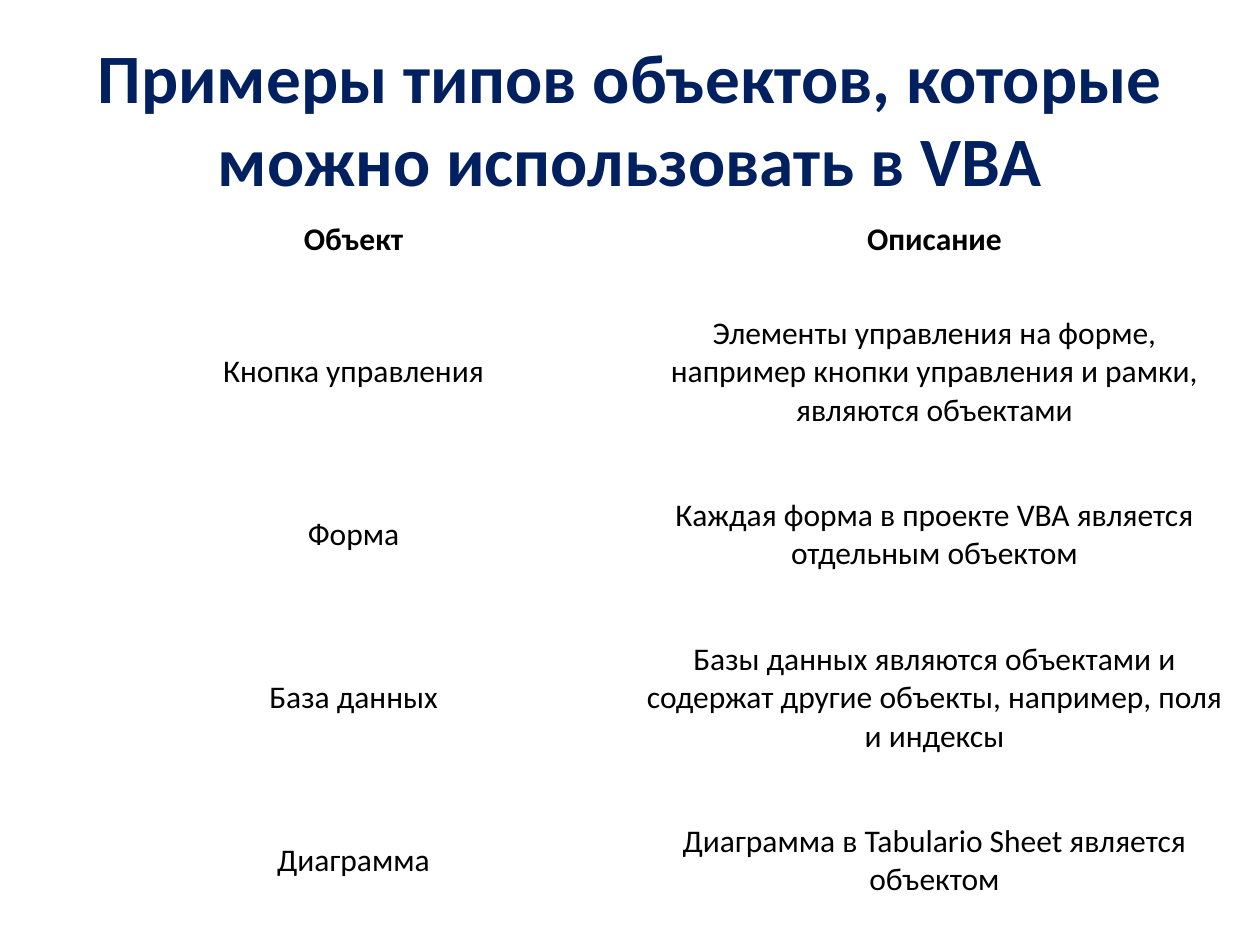
from dataclasses import dataclass

from pptx import Presentation
from pptx.dml.color import RGBColor
from pptx.enum.text import MSO_ANCHOR, PP_ALIGN
from pptx.util import Pt

EMU_PER_PX = 914400 / 126


@dataclass(frozen=True)
class Theme:
    font: str = "Calibri"
    background: str = "FFFFFF"
    title_color: str = "002060"
    text_color: str = "000000"
    title_size: float = 39.6
    table_size: float = 18


def px(length):
    return round(length * EMU_PER_PX)


def write_text(text_frame, text, *, font, size, color, bold=False):
    paragraph = text_frame.paragraphs[0]
    paragraph.alignment = PP_ALIGN.CENTER
    run = paragraph.add_run()
    run.text = text
    run.font.name = font
    run.font.size = Pt(size)
    run.font.bold = bold
    run.font.color.rgb = RGBColor.from_string(color)


class SlideBuilder:
    def __init__(self, slide, theme):
        self.slide = slide
        self.theme = theme
        fill = slide.background.fill
        fill.solid()
        fill.fore_color.rgb = RGBColor.from_string(theme.background)

    def title(self, text, left, top, width, height):
        box = self.slide.shapes.add_textbox(px(left), px(top), px(width), px(height))
        text_frame = box.text_frame
        text_frame.word_wrap = True
        text_frame.vertical_anchor = MSO_ANCHOR.MIDDLE
        write_text(text_frame, text, font=self.theme.font, size=self.theme.title_size,
                   color=self.theme.title_color, bold=True)

    def table(self, rows, left, top, column_widths, row_heights, margin):
        """Add a table whose first row is a bold header."""
        table = self.slide.shapes.add_table(
            len(rows), len(column_widths), px(left), px(top),
            px(sum(column_widths)), px(sum(row_heights))).table
        for column, width in zip(table.columns, column_widths):
            column.width = px(width)
        for row_index, (texts, height) in enumerate(zip(rows, row_heights)):
            table.rows[row_index].height = px(height)
            for column_index, text in enumerate(texts):
                self.cell(table.cell(row_index, column_index), text, margin,
                          bold=row_index == 0)

    def cell(self, cell, text, margin, bold):
        cell.fill.solid()
        cell.fill.fore_color.rgb = RGBColor.from_string(self.theme.background)
        cell.vertical_anchor = MSO_ANCHOR.MIDDLE
        cell.margin_left = cell.margin_right = px(margin)
        cell.margin_top = cell.margin_bottom = px(margin)
        write_text(cell.text_frame, text, font=self.theme.font,
                   size=self.theme.table_size, color=self.theme.text_color, bold=bold)


OBJECT_ROWS = [
    ("Объект", "Описание"),
    ("Кнопка управления",
     "Элементы управления на форме, например кнопки управления и рамки, "
     "являются объектами"),
    ("Форма", "Каждая форма в проекте VBA является отдельным объектом"),
    ("База данных",
     "Базы данных являются объектами и содержат другие объекты, "
     "например, поля и индексы"),
    ("Диаграмма", "Диаграмма в Tabulario Sheet является объектом"),
]


def main():
    presentation = Presentation()
    presentation.slide_width = px(1260)
    presentation.slide_height = px(945)
    blank_layout = presentation.slide_layouts[6]
    builder = SlideBuilder(presentation.slides.add_slide(blank_layout), Theme())
    builder.title("Примеры типов объектов, которые можно использовать в VBA",
                  63, 38, 1134, 158)
    builder.table(OBJECT_ROWS, 63, 204, column_widths=[581, 581],
                  row_heights=[71, 194, 132, 194, 132], margin=2)
    presentation.save("out.pptx")


if __name__ == "__main__":
    main()
